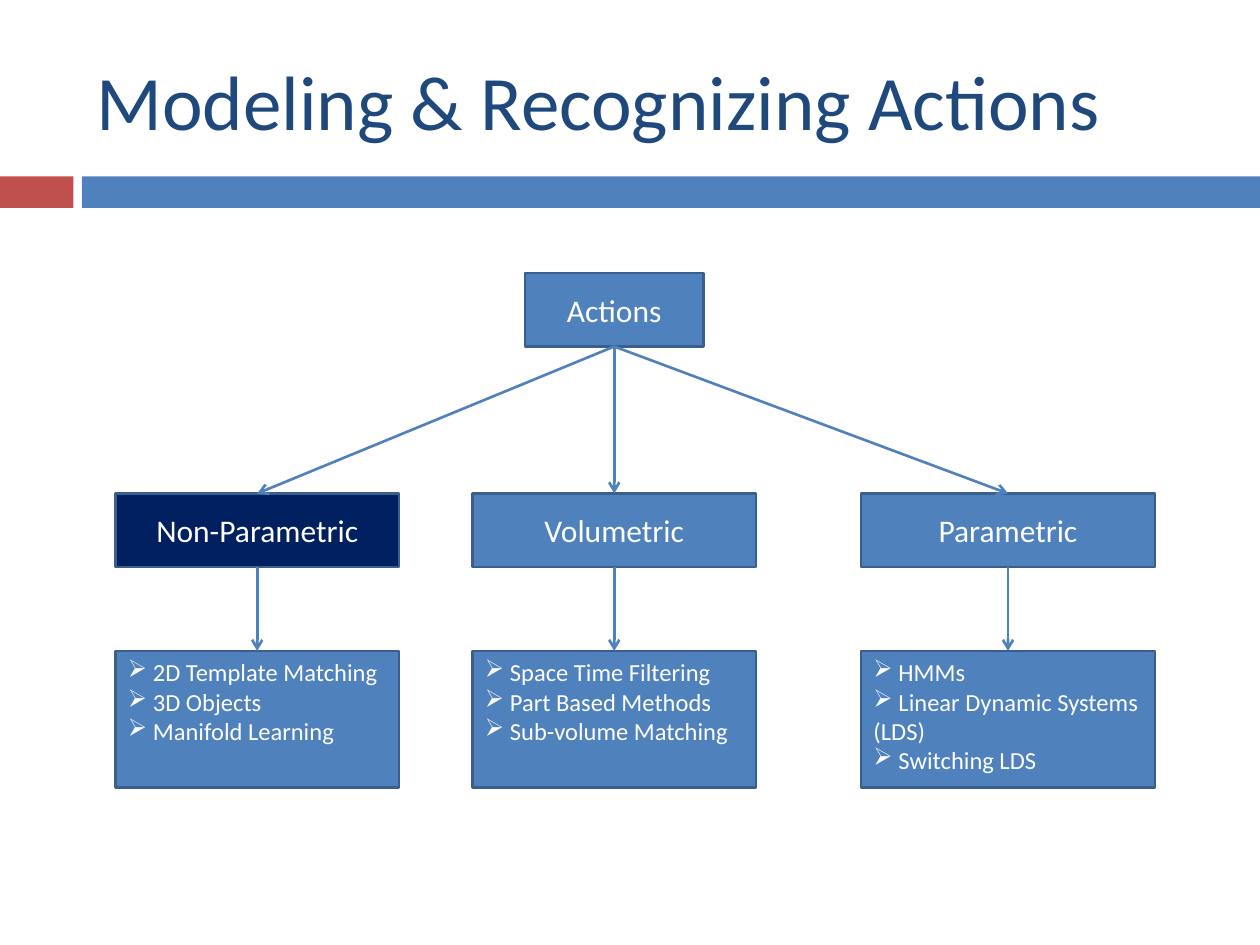
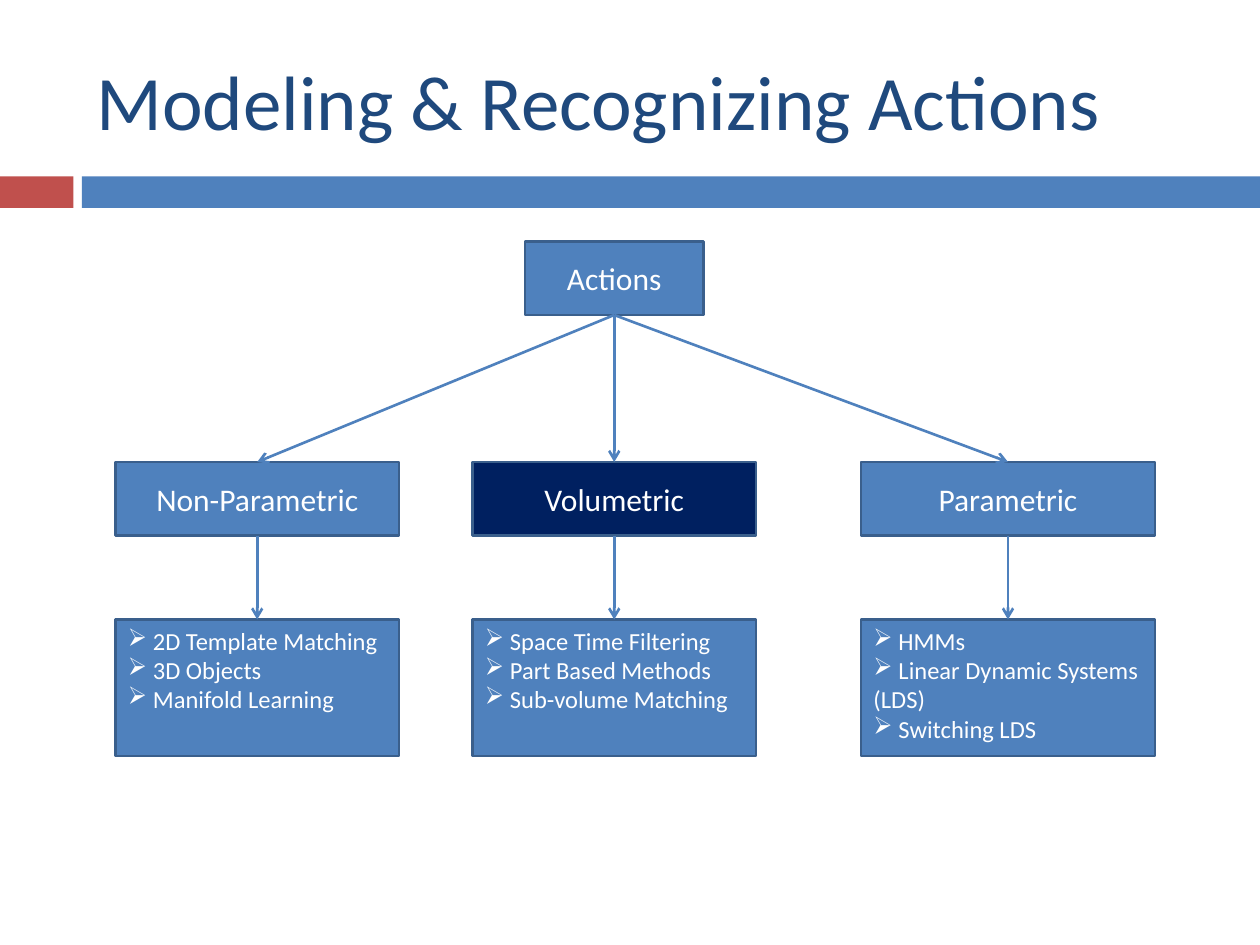
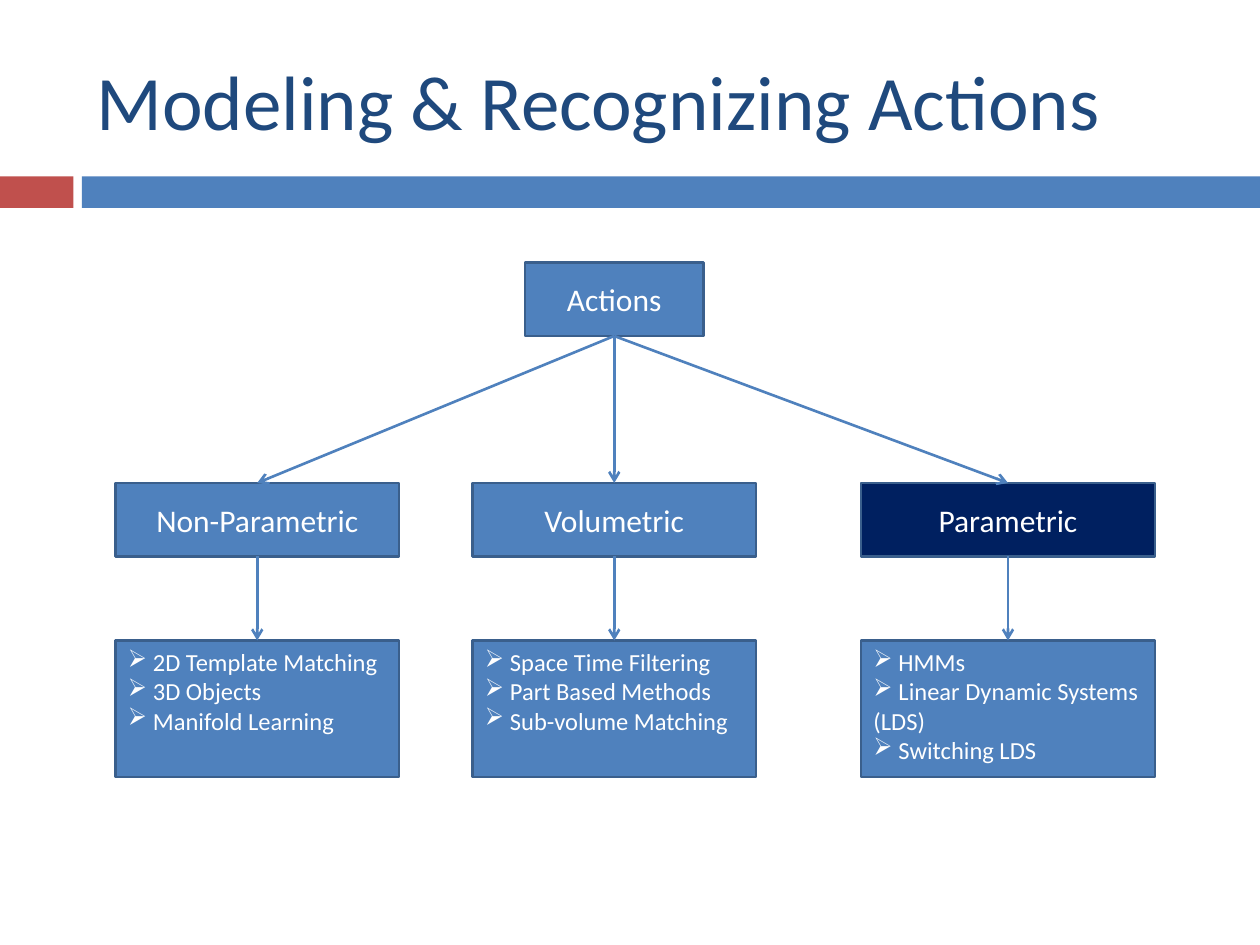
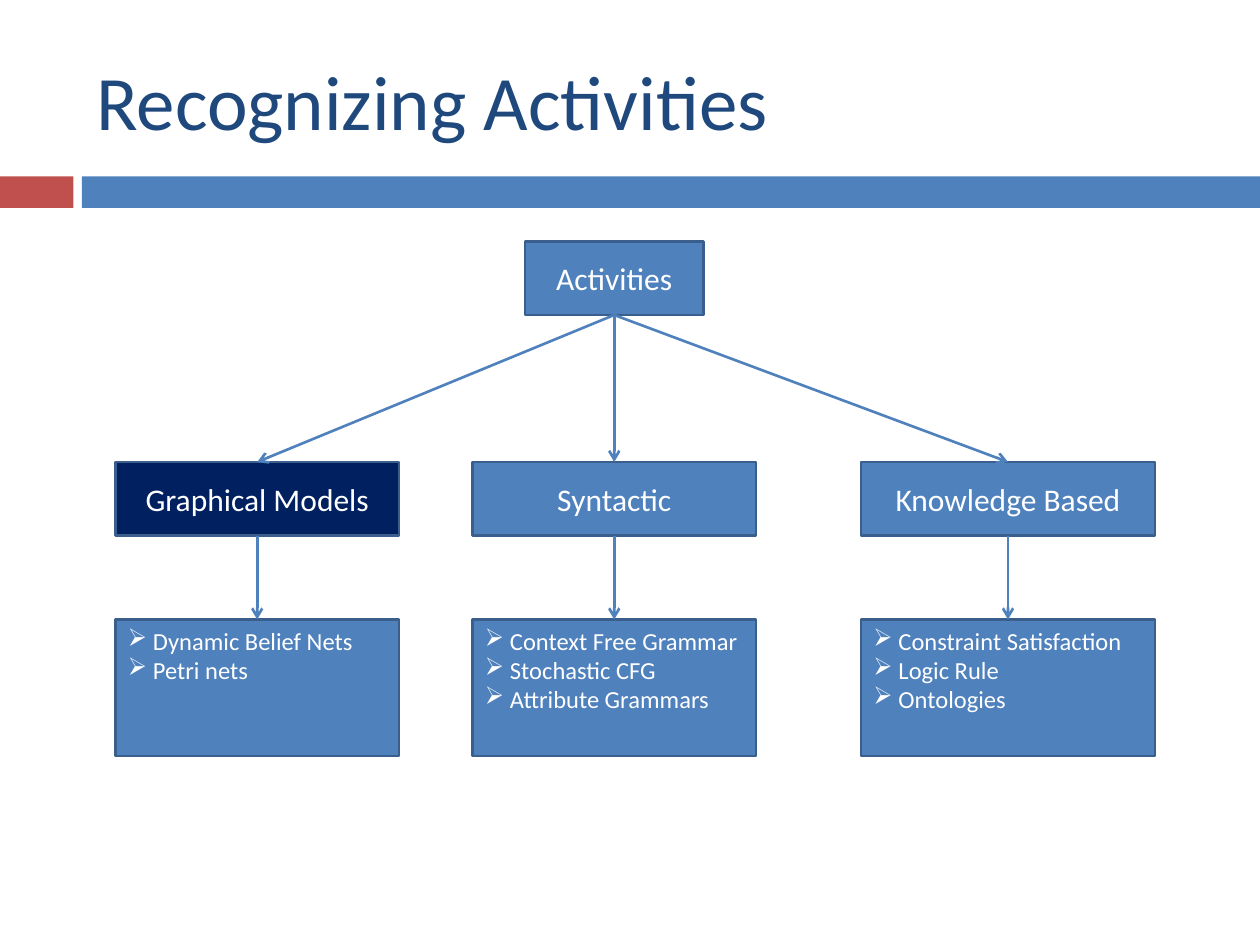
import pptx
import pptx.dml.color
import pptx.enum.shapes
import pptx.enum.text
import pptx.oxml.ns
import pptx.util
from lxml import etree

Pt = pptx.util.Pt
RGBColor = pptx.dml.color.RGBColor
PP_ALIGN = pptx.enum.text.PP_ALIGN
MSO_ANCHOR = pptx.enum.text.MSO_ANCHOR
qn = pptx.oxml.ns.qn

# Content: each branch is a heading with its methods
ACTION_BRANCHES = [
    ("Non-Parametric", ["2D Template Matching", "3D Objects", "Manifold Learning"]),
    ("Volumetric", ["Space Time Filtering", "Part Based Methods", "Sub-volume Matching"]),
    ("Parametric", ["HMMs", "Linear Dynamic Systems (LDS)", "Switching LDS"]),
]
ACTIVITY_BRANCHES = [
    ("Graphical Models", ["Dynamic Belief Nets", "Petri nets"]),
    ("Syntactic", ["Context Free Grammar", "Stochastic CFG", "Attribute Grammars"]),
    ("Knowledge Based", ["Constraint Satisfaction", "Logic Rule", "Ontologies"]),
]
ACTIONS = ("Modeling & Recognizing Actions", "Actions", ACTION_BRANCHES)
ACTIVITIES = ("Recognizing Activities", "Activities", ACTIVITY_BRANCHES)

# Each slide: tree, highlighted branch, top of the tree
SLIDES = [
    (ACTIONS, "Non-Parametric", 156),
    (ACTIONS, "Volumetric", 138),
    (ACTIONS, "Parametric", 150),
    (ACTIVITIES, "Graphical Models", 138),
]

# Colours
WHITE = RGBColor(0xFF, 0xFF, 0xFF)
TITLE_BLUE = RGBColor(0x1F, 0x49, 0x7D)
BLUE = RGBColor(0x4F, 0x81, 0xBD)
RED = RGBColor(0xC0, 0x50, 0x4D)
NAVY = RGBColor(0x00, 0x20, 0x60)
OUTLINE = RGBColor(0x3A, 0x5F, 0x8C)

# Layout in points
SLIDE_WIDTH, SLIDE_HEIGHT = 720, 540
TITLE_AREA = (48, 18, 642, 78)
BANDS = [((0, 100.8, 42, 18), RED), ((46.8, 100.8, 673.2, 18), BLUE)]
ROOT_LEFT, ROOT_WIDTH = 300, 102
COLUMNS = [(66, 162), (270, 162), (492, 168)]  # left, width
HEADING_HEIGHT, METHODS_HEIGHT = 42, 78
HEADING_DROP, METHODS_DROP = 126, 216  # below the top of the tree
LINE_WIDTH = Pt(1.5)
TOP_SITE, BOTTOM_SITE = 0, 2

# Text formats
TITLE_FONT = {"name": "Calibri", "size": Pt(44)}
HEADING_FONT = {"name": "Calibri", "size": Pt(18)}
METHOD_FONT = {"name": "Calibri", "size": Pt(14)}
MIDDLE_FRAME = {"word_wrap": True, "vertical_anchor": MSO_ANCHOR.MIDDLE}
TOP_FRAME = {"word_wrap": True, "vertical_anchor": MSO_ANCHOR.TOP}


def set_all(target, values):
    for name, value in values.items():
        setattr(target, name, value)


def write(shape, lines, font, color, frame, align, bullet=None):
    text_frame = shape.text_frame
    set_all(text_frame, frame)
    text_frame.text = "\n".join(lines)
    for paragraph in text_frame.paragraphs:
        paragraph.alignment = align
        set_all(paragraph.runs[0].font, font)
        paragraph.runs[0].font.color.rgb = color
        if bullet:
            properties = paragraph._p.get_or_add_pPr()
            etree.SubElement(properties, qn("a:buChar"), char=bullet)


def add_rect(slide, area, fill, outline=None):
    rect = slide.shapes.add_shape(
        pptx.enum.shapes.MSO_SHAPE.RECTANGLE, *map(Pt, area))
    rect.shadow.inherit = False
    rect.fill.solid()
    rect.fill.fore_color.rgb = fill
    if outline is None:
        rect.line.fill.background()
    else:
        rect.line.color.rgb = outline
        rect.line.width = LINE_WIDTH
    return rect


def add_heading(slide, text, area, fill=BLUE):
    heading = add_rect(slide, area, fill, OUTLINE)
    write(heading, [text], HEADING_FONT, WHITE, MIDDLE_FRAME, PP_ALIGN.CENTER)
    return heading


def add_methods(slide, methods, area):
    box = add_rect(slide, area, BLUE, OUTLINE)
    # The bullet has no indent, so one space parts it from the text
    write(box, [" " + method for method in methods], METHOD_FONT, WHITE,
          TOP_FRAME, PP_ALIGN.LEFT, bullet="➢")
    return box


def add_arrow(slide, parent, child):
    arrow = slide.shapes.add_connector(
        pptx.enum.shapes.MSO_CONNECTOR.STRAIGHT, 0, 0, 0, 0)
    arrow.begin_connect(parent, BOTTOM_SITE)
    arrow.end_connect(child, TOP_SITE)
    arrow.line.color.rgb = BLUE
    arrow.line.width = LINE_WIDTH
    etree.SubElement(arrow.line._get_or_add_ln(), qn("a:tailEnd"), type="arrow")
    etree.SubElement(arrow._element.spPr, qn("a:effectLst"))


def add_frame(slide, title):
    for area, color in BANDS:
        add_rect(slide, area, color)
    title_box = slide.shapes.add_textbox(*map(Pt, TITLE_AREA))
    write(title_box, [title], TITLE_FONT, TITLE_BLUE, MIDDLE_FRAME, PP_ALIGN.LEFT)


def add_tree(slide, root_text, branches, highlighted, top):
    root = add_heading(slide, root_text, (ROOT_LEFT, top, ROOT_WIDTH, HEADING_HEIGHT))
    headings = [
        add_heading(slide, name, (left, top + HEADING_DROP, width, HEADING_HEIGHT),
                    NAVY if name == highlighted else BLUE)
        for (name, _), (left, width) in zip(branches, COLUMNS)]
    method_boxes = [
        add_methods(slide, methods, (left, top + METHODS_DROP, width, METHODS_HEIGHT))
        for (_, methods), (left, width) in zip(branches, COLUMNS)]
    for heading in headings:
        add_arrow(slide, root, heading)
    for heading, box in zip(headings, method_boxes):
        add_arrow(slide, heading, box)


def main():
    deck = pptx.Presentation()
    deck.slide_width, deck.slide_height = Pt(SLIDE_WIDTH), Pt(SLIDE_HEIGHT)
    for (title, root_text, branches), highlighted, top in SLIDES:
        slide = deck.slides.add_slide(deck.slide_layouts[6])
        add_frame(slide, title)
        add_tree(slide, root_text, branches, highlighted, top)
    deck.save("out.pptx")


if __name__ == "__main__":
    main()
